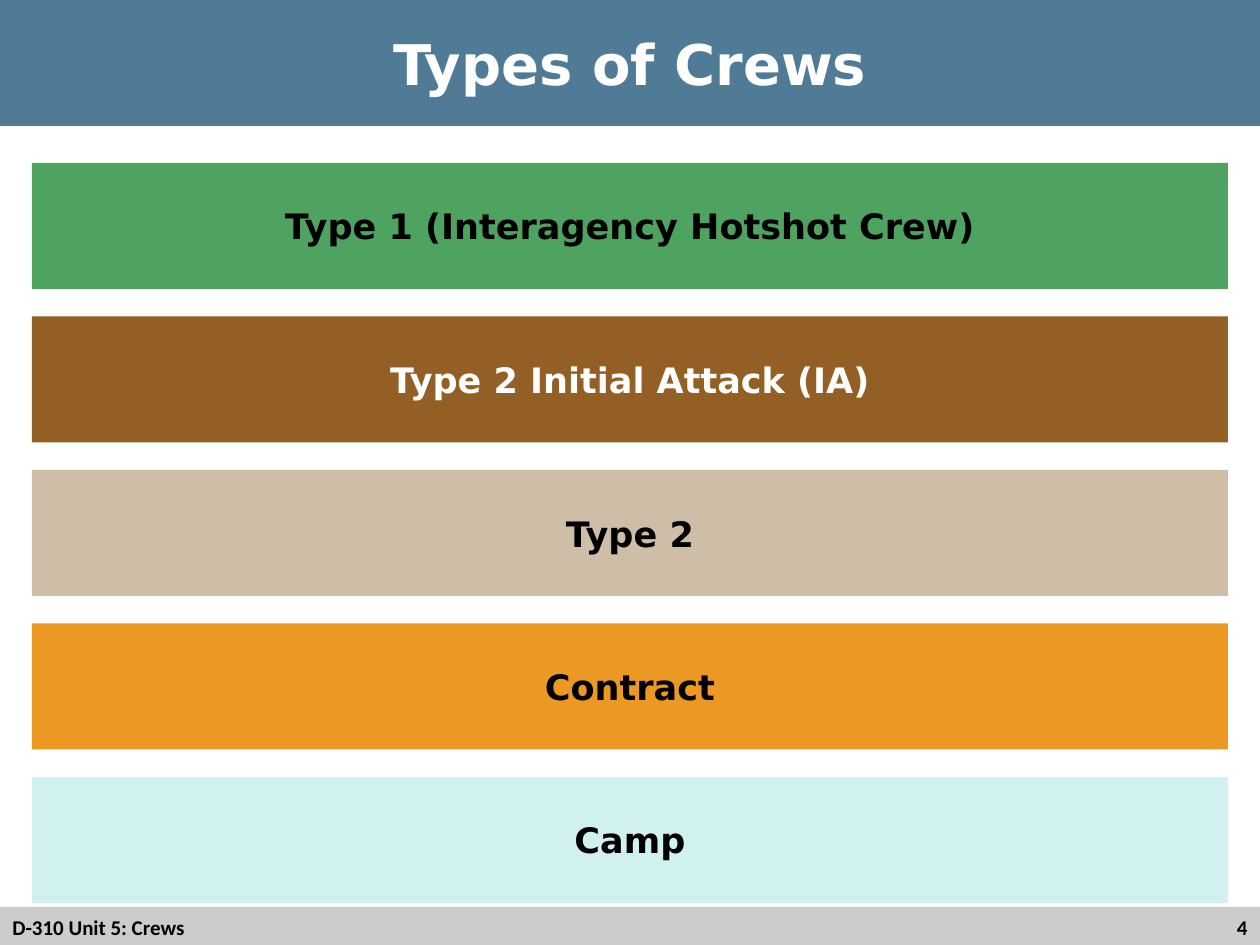
import pptx
import pptx.util
import pptx.dml.color
import pptx.enum.shapes
import pptx.enum.text

# Content
TITLE = "Types of Crews"
CREWS = [  # label, fill, text colour
    ("Type 1 (Interagency Hotshot Crew)", "green", "black"),
    ("Type 2 Initial Attack (IA)", "brown", "white"),
    ("Type 2", "tan", "black"),
    ("Contract", "orange", "black"),
    ("Camp", "ice", "black"),
]
FOOTER = "D-310 Unit 5: Crews"
PAGE = "4"

COLORS = {
    "black": "000000", "white": "FFFFFF", "blue": "507B97", "grey": "CCCCCC",
    "green": "4EA361", "brown": "935F24", "tan": "CEBEA7",
    "orange": "EB9922", "ice": "D1F0F0",
}
HEAD_FONT, FOOT_FONT = "DejaVu Sans", "Calibri"
ALIGN = pptx.enum.text.PP_ALIGN

# Layout in px
PX = pptx.util.Inches(1) / 126
WIDTH, HEIGHT = 1260, 945
BAR_H, MARGIN = 126, 32
FIRST_TOP, LAST_TOP = 163, 777
FOOT_TOP, FOOT_H = 907, 40


def px(n):
    return pptx.util.Emu(round(n * PX))


def color(name):
    return pptx.dml.color.RGBColor.from_string(COLORS[name])


def add_bar(slide, x, y, w, h, fill):
    sp = slide.shapes.add_shape(
        pptx.enum.shapes.MSO_SHAPE.RECTANGLE, px(x), px(y), px(w), px(h))
    sp.shadow.inherit = False
    sp.fill.solid()
    sp.fill.fore_color.rgb = color(fill)
    sp.line.fill.background()
    return sp


def set_text(sp, text, size, font, ink, align):
    tf = sp.text_frame
    tf.word_wrap = True
    tf.vertical_anchor = pptx.enum.text.MSO_ANCHOR.MIDDLE
    p = tf.paragraphs[0]
    p.text = text
    p.alignment = align
    r = p.runs[0]
    r.font.size = pptx.util.Pt(size)
    r.font.name = font
    r.font.bold = True
    r.font.color.rgb = color(ink)


def main():
    prs = pptx.Presentation()
    prs.slide_width, prs.slide_height = px(WIDTH), px(HEIGHT)
    s = prs.slides.add_slide(prs.slide_layouts[6])

    # Footer band, unit name and page number
    add_bar(s, 0, FOOT_TOP, WIDTH, FOOT_H, "grey")
    for text, x, w, align in [(FOOTER, 0, 756, ALIGN.LEFT),
                              (PAGE, 966, 294, ALIGN.RIGHT)]:
        sp = s.shapes.add_textbox(px(x), px(FOOT_TOP), px(w), px(FOOT_H))
        set_text(sp, text, 12, FOOT_FONT, "black", align)

    # Title band
    sp = add_bar(s, 0, 0, WIDTH, BAR_H, "blue")
    set_text(sp, TITLE, 32, HEAD_FONT, "white", ALIGN.CENTER)

    # Evenly spaced crew bars
    step = (LAST_TOP - FIRST_TOP) / (len(CREWS) - 1)
    for i, (label, fill, ink) in enumerate(CREWS):
        sp = add_bar(s, MARGIN, FIRST_TOP + i * step,
                     WIDTH - 2 * MARGIN, BAR_H, fill)
        set_text(sp, label, 20, HEAD_FONT, ink, ALIGN.CENTER)

    prs.save("out.pptx")


if __name__ == "__main__":
    main()
